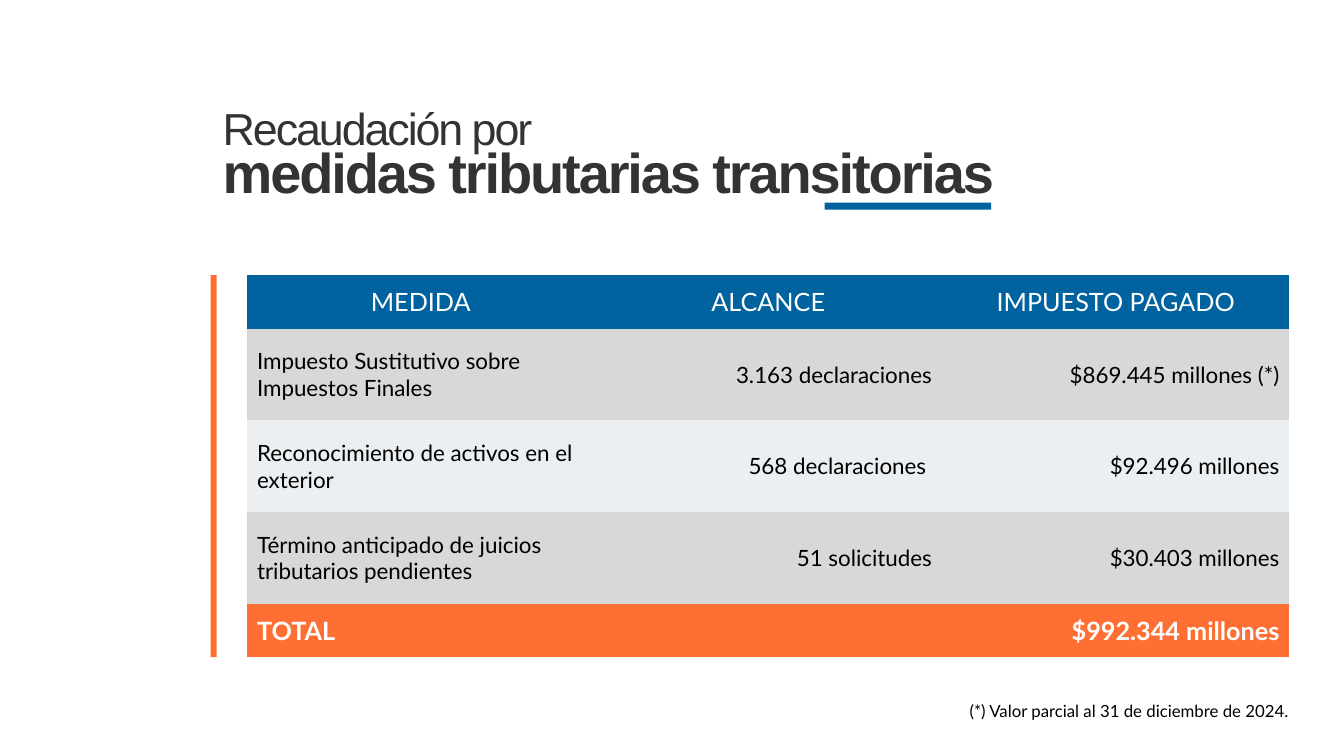
from dataclasses import dataclass

from lxml import etree
from pptx import Presentation
from pptx import util as u
from pptx.dml.color import RGBColor
from pptx.enum import shapes, text
from pptx.oxml import ns

LEFT, CENTER, RIGHT = text.PP_ALIGN.LEFT, text.PP_ALIGN.CENTER, text.PP_ALIGN.RIGHT


@dataclass(frozen=True)
class Theme:
    blue: str = "0063A0"
    orange: str = "FF6F33"
    gray: str = "D8D8D8"
    pale: str = "ECEFF1"
    ink: str = "333333"
    black: str = "000000"
    white: str = "FFFFFF"
    heading_font: str = "Arial"
    body_font: str = "Lato"
    lead_size: int = 32
    title_size: int = 40
    head_size: int = 18
    body_size: int = 16
    note_size: int = 12


THEME = Theme()
NO_GRID_STYLE = "{2D5ABB26-0587-4C30-8999-92F81FD0307C}"

HEADINGS = ("MEDIDA", "ALCANCE", "IMPUESTO PAGADO")
MEASURES = (
    ("Impuesto Sustitutivo sobre Impuestos Finales", "3.163 declaraciones",
     "$869.445 millones (*)"),
    ("Reconocimiento de activos en el exterior", "568 declaraciones ",
     "$92.496 millones"),
    ("Término anticipado de juicios tributarios pendientes", "51 solicitudes",
     "$30.403 millones"),
)
TOTAL = ("TOTAL", "", "$992.344 millones")


def inches(*lengths):
    return [u.Inches(length) for length in lengths]


def write(paragraph, wording, color, align=LEFT, **font_format):
    paragraph.alignment = align
    run = paragraph.add_run()
    run.text = wording
    for name, value in font_format.items():
        setattr(run.font, name, value)
    run.font.color.rgb = RGBColor.from_string(color)
    return run


def add_bar(slide, box, color):
    bar = slide.shapes.add_shape(shapes.MSO_SHAPE.RECTANGLE, *inches(*box))
    bar.shadow.inherit = False
    bar.fill.solid()
    bar.fill.fore_color.rgb = RGBColor.from_string(color)
    bar.line.fill.background()


def add_text_frame(slide, box, wrap):
    frame = slide.shapes.add_textbox(*inches(*box)).text_frame
    frame.word_wrap = wrap
    frame.auto_size = text.MSO_AUTO_SIZE.SHAPE_TO_FIT_TEXT
    return frame


def add_title(slide, box):
    """Two-line heading with a blue stroke under its last letters."""
    left, top, width, height = box
    add_bar(slide, (left + width - 1.85, top + 1.03, 1.65, 0.07), THEME.blue)
    frame = add_text_frame(slide, box, wrap=False)
    lines = (
        ("Recaudación por", THEME.lead_size, False),
        ("medidas tributarias transitorias", THEME.title_size, True),
    )
    for index, (wording, size, bold) in enumerate(lines):
        paragraph = frame.add_paragraph() if index else frame.paragraphs[0]
        paragraph.line_spacing = u.Pt(36)
        run = write(paragraph, wording, THEME.ink, name=THEME.heading_font,
                    size=u.Pt(size), bold=bold)
        run.font._element.set("spc", "-150")


def fill_row(row, wordings, aligns, fill, color, size, bold=False):
    for cell, wording, align in zip(row.cells, wordings, aligns):
        cell.fill.solid()
        cell.fill.fore_color.rgb = RGBColor.from_string(fill)
        cell.vertical_anchor = text.MSO_ANCHOR.MIDDLE
        if wording:
            write(cell.text_frame.paragraphs[0], wording, color, align,
                  name=THEME.body_font, size=u.Pt(size), bold=bold)


def add_revenue_table(slide, box):
    """Table of measures with an orange bar to its left."""
    left, top, width, height = box
    add_bar(slide, (left - 0.36, top, 0.06, height), THEME.orange)
    edge_height = 0.53
    measure_height = (height - 2 * edge_height) / len(MEASURES)
    table = slide.shapes.add_table(
        len(MEASURES) + 2, len(HEADINGS), *inches(*box)).table
    table.first_row = table.horz_banding = False
    table._tbl.tblPr.find(ns.qn("a:tableStyleId")).text = NO_GRID_STYLE

    for column in table.columns:
        column.width = u.Inches(width / len(HEADINGS))
    heights = [edge_height, *[measure_height] * len(MEASURES), edge_height]
    for row, row_height in zip(table.rows, heights):
        row.height = u.Inches(row_height)

    header, *measure_rows, total = table.rows
    value_aligns = (LEFT, RIGHT, RIGHT)
    fill_row(header, HEADINGS, [CENTER] * 3, THEME.blue, THEME.white, THEME.head_size)
    for index, (row, measure) in enumerate(zip(measure_rows, MEASURES)):
        fill_row(row, measure, value_aligns, THEME.pale if index % 2 else THEME.gray,
                 THEME.black, THEME.body_size)
    fill_row(total, TOTAL, value_aligns, THEME.orange, THEME.white,
             THEME.head_size, bold=True)


def add_footnote(slide, box):
    frame = add_text_frame(slide, box, wrap=True)
    write(frame.paragraphs[0], "(*) Valor parcial al 31 de diciembre de 2024.",
          THEME.black, RIGHT, name=THEME.body_font, size=u.Pt(THEME.note_size))


def main():
    deck = Presentation()
    deck.slide_width, deck.slide_height = inches(13.33, 7.5)
    slide = deck.slides.add_slide(deck.slide_layouts[6])
    add_title(slide, (2.11, 0.98, 7.92, 1.11))
    add_revenue_table(slide, (2.45, 2.73, 10.34, 3.79))
    add_footnote(slide, (5.63, 6.9, 7.25, 0.3))
    deck.save("out.pptx")


if __name__ == "__main__":
    main()
